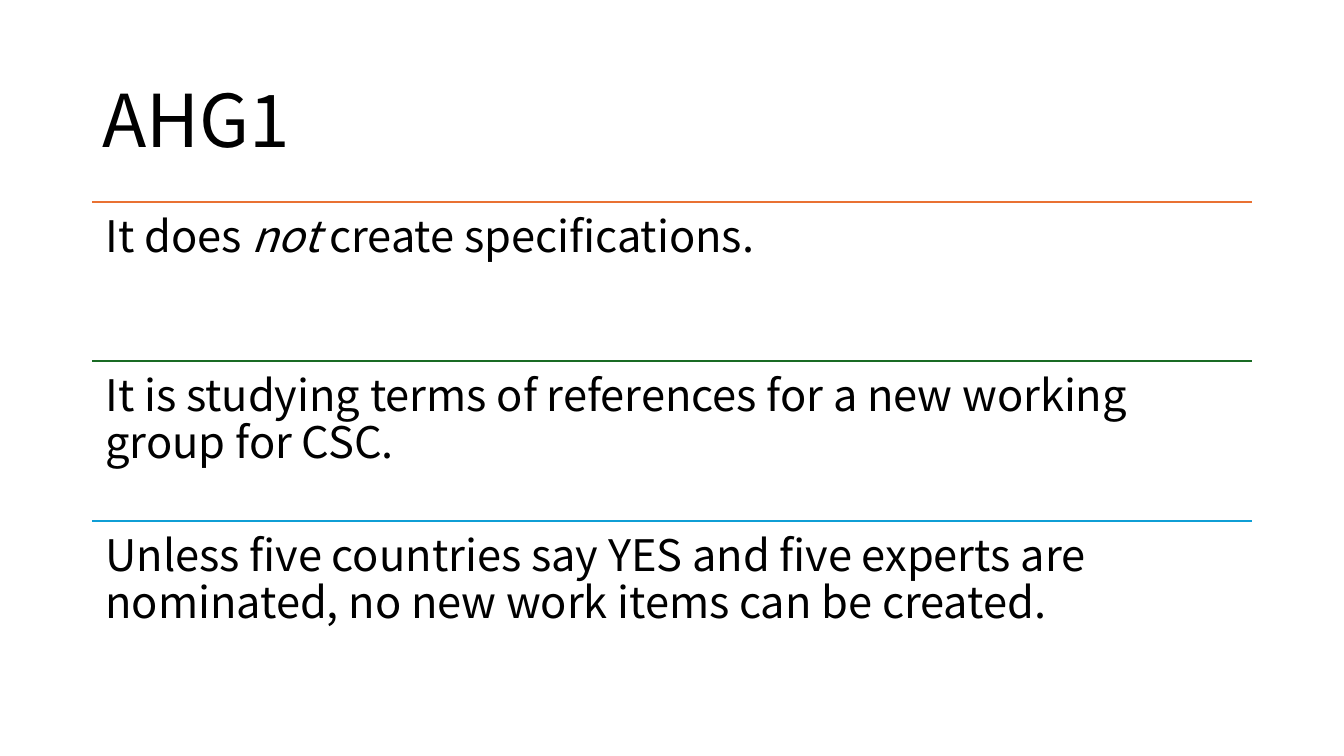
"""Build the AHG1 slide: a title above three ruled statements."""
from dataclasses import dataclass

from lxml import etree
from pptx import Presentation, util as u
from pptx.dml.color import RGBColor
from pptx.enum import shapes, text
from pptx.oxml.ns import qn

CELL = u.Inches(1) // 12
COLS, ROWS = 160, 90
LEFT, WIDTH = 11, 138
BAND_TOP, BAND_ROWS = 24, 19
FONT = "Noto Sans CJK JP"
COLORS = {"text": "000000", "orange": "E97132", "green": "196B24", "blue": "0F9ED5"}


@dataclass
class Run:
    text: str
    italic: bool = False


@dataclass
class Band:
    color: str
    runs: list[Run]


BANDS = [
    Band("orange", [Run("It does "), Run("not", True), Run(" create specifications.")]),
    Band("green", [Run("It is studying terms of references for a new working group for CSC.")]),
    Band("blue", [Run("Unless five countries say YES and five experts are nominated, "
                      "no new work items can be created.")]),
]


def cells(n: float) -> u.Emu:
    return u.Emu(round(n * CELL))


def rgb(name: str) -> RGBColor:
    return RGBColor.from_string(COLORS[name])


def add_text(slide, top: float, rows: float, runs: list[Run], size: float):
    sp = slide.shapes.add_textbox(cells(LEFT), cells(top), cells(WIDTH), cells(rows))
    tf = sp.text_frame
    tf.word_wrap = True
    p = tf.paragraphs[0]
    p.line_spacing = 0.9
    p.font.name, p.font.size = FONT, u.Pt(size)
    p.font.color.rgb = rgb("text")
    for run in runs:
        r = p.add_run()
        r.text = run.text
        if run.italic:
            r.font.italic = True
    return tf


def add_rule(slide, top: float, color: str) -> None:
    y = cells(top)
    line = slide.shapes.add_connector(
        shapes.MSO_CONNECTOR.STRAIGHT, cells(LEFT), y, cells(LEFT + WIDTH), y)
    line.line.color.rgb = rgb(color)
    line.line.width = u.Pt(1.5)
    etree.SubElement(line._element.spPr, qn("a:effectLst"))


def add_band(slide, index: int, band: Band) -> None:
    top = BAND_TOP + index * BAND_ROWS
    add_rule(slide, top, band.color)
    tf = add_text(slide, top, BAND_ROWS, band.runs, 31)
    tf.margin_left = tf.margin_top = tf.margin_right = tf.margin_bottom = u.Inches(0.13)


def main() -> None:
    prs = Presentation()
    prs.slide_width, prs.slide_height = cells(COLS), cells(ROWS)
    slide = prs.slides.add_slide(prs.slide_layouts[6])
    title = add_text(slide, 7.3, 14.9, [Run("AHG1")], 52)
    title.vertical_anchor = text.MSO_ANCHOR.MIDDLE
    for index, band in enumerate(BANDS):
        add_band(slide, index, band)
    prs.save("out.pptx")


if __name__ == "__main__":
    main()
